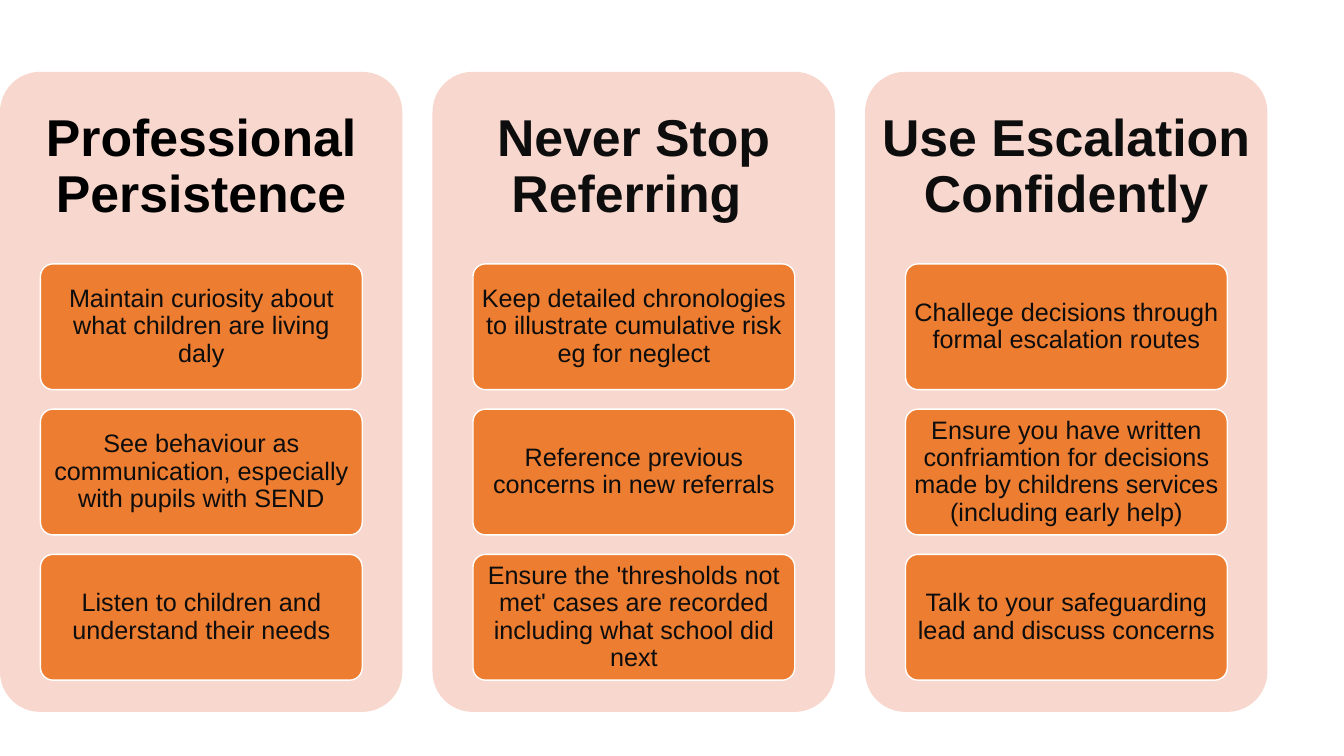
import pptx
import pptx.util
import pptx.dml.color
import pptx.enum.shapes
import pptx.enum.text

Cm = pptx.util.Cm
Pt = pptx.util.Pt

COLOURS = {"panel": "F8D7CE", "card": "ED7D31", "edge": "FFFFFF",
           "black": "000000", "ink": "0D0D0D"}

# Each column: heading, heading colour, cards
COLUMNS = [
    ("Professional Persistence", "black", [
        "Maintain curiosity about what children are living daly",
        "See behaviour as communication, especially with pupils with SEND",
        "Listen to children and understand their needs"]),
    ("Never Stop Referring ", "ink", [
        "Keep detailed chronologies to illustrate cumulative risk eg for neglect",
        "Reference previous concerns in new referrals",
        "Ensure the 'thresholds not met' cases are recorded including what school did next"]),
    ("Use Escalation Confidently", "ink", [
        "Challege decisions through formal escalation routes",
        "Ensure you have written confriamtion for decisions made by childrens services "
        "(including early help)",
        "Talk to your safeguarding lead and discuss concerns"]),
]

# Layout in centimetres
COLUMN_PITCH, COLUMN_WIDTH = 10.9, 10.14
PANEL_TOP, PANEL_HEIGHT, HEADING_HEIGHT = 1.81, 16.13, 4.84
CARD_INDENT, CARD_WIDTH, CARD_HEIGHT = 1.02, 8.11, 3.17
CARD_TOP, CARD_PITCH = 6.65, 3.66


class Painter:
    """Holds the style and the current page."""

    def __init__(self, page, font="Arial"):
        self.page = page
        self.font = font

    def colour(self, name):
        return pptx.dml.color.RGBColor.from_string(COLOURS[name])

    def rounded(self, left, top, width, height, fill, edge=None):
        box = self.page.shapes.add_shape(
            pptx.enum.shapes.MSO_SHAPE.ROUNDED_RECTANGLE,
            Cm(left), Cm(top), Cm(width), Cm(height))
        box.adjustments[0] = 0.1
        box.shadow.inherit = False
        box.fill.solid()
        box.fill.fore_color.rgb = self.colour(fill)
        if edge:
            box.line.color.rgb = self.colour(edge)
            box.line.width = Pt(1)
        else:
            box.line.fill.background()
        return box

    def label(self, box, text, size, colour, side, vertical, bold=False):
        frame = box.text_frame
        frame.word_wrap = True
        frame.vertical_anchor = pptx.enum.text.MSO_ANCHOR.MIDDLE
        frame.margin_left = frame.margin_right = Cm(side)
        frame.margin_top = frame.margin_bottom = Cm(vertical)
        para = frame.paragraphs[0]
        para.text = text
        para.alignment = pptx.enum.text.PP_ALIGN.CENTER
        para.line_spacing = 0.9
        para.font.name = self.font
        para.font.size = Pt(size)
        para.font.bold = bold
        para.font.color.rgb = self.colour(colour)

    def heading(self, left, top, width, height, text, colour):
        box = self.page.shapes.add_textbox(Cm(left), Cm(top), Cm(width), Cm(height))
        self.label(box, text, 37, colour, 0.37, 0.37, bold=True)

    def card(self, left, top, width, height, text):
        box = self.rounded(left, top, width, height, "card", "edge")
        self.label(box, text, 18, "ink", 0.11, 0.09)


def main():
    deck = pptx.Presentation()
    deck.slide_width, deck.slide_height = Cm(33.87), Cm(19.05)
    painter = Painter(deck.slides.add_slide(deck.slide_layouts[6]))

    for column, (heading, colour, cards) in enumerate(COLUMNS):
        left = column * COLUMN_PITCH
        # Panel and heading
        painter.rounded(left, PANEL_TOP, COLUMN_WIDTH, PANEL_HEIGHT, "panel")
        painter.heading(left, PANEL_TOP, COLUMN_WIDTH, HEADING_HEIGHT, heading, colour)
        # Stacked cards
        for row, text in enumerate(cards):
            painter.card(left + CARD_INDENT, CARD_TOP + row * CARD_PITCH,
                         CARD_WIDTH, CARD_HEIGHT, text)

    deck.save("out.pptx")


if __name__ == "__main__":
    main()
